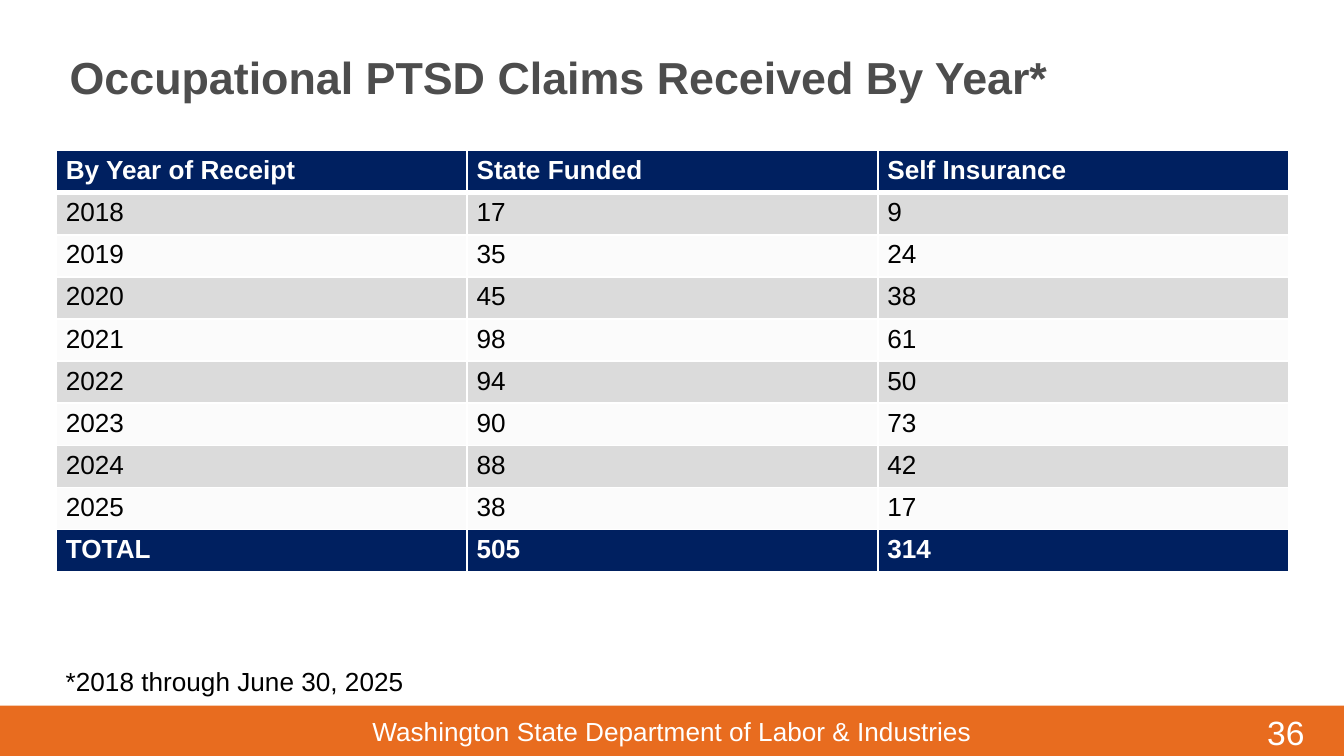
from lxml import etree
from pptx import Presentation
from pptx.dml.color import RGBColor
from pptx.enum.shapes import MSO_SHAPE
from pptx.enum.text import MSO_ANCHOR, PP_ALIGN
from pptx.oxml.ns import qn
from pptx.util import Inches, Pt

RECTANGLE = MSO_SHAPE.RECTANGLE
TOP, MIDDLE = MSO_ANCHOR.TOP, MSO_ANCHOR.MIDDLE
LEFT, CENTER = PP_ALIGN.LEFT, PP_ALIGN.CENTER

WHITE = RGBColor(0xFF, 0xFF, 0xFF)
BLACK = RGBColor(0x00, 0x00, 0x00)
GRAY = RGBColor(0x4D, 0x4D, 0x4D)
ORANGE = RGBColor(0xE8, 0x6C, 0x1F)
NAVY = RGBColor(0x00, 0x20, 0x60)
BAND_DARK = RGBColor(0xDB, 0xDB, 0xDB)
BAND_LIGHT = RGBColor(0xFB, 0xFB, 0xFB)

FONT = "Arial"
SLIDE_WIDTH = 10
SLIDE_HEIGHT = SLIDE_WIDTH * 9 / 16
CLAIMS = [
    ("By Year of Receipt", "State Funded", "Self Insurance"),
    ("2018", "17", "9"),
    ("2019", "35", "24"),
    ("2020", "45", "38"),
    ("2021", "98", "61"),
    ("2022", "94", "50"),
    ("2023", "90", "73"),
    ("2024", "88", "42"),
    ("2025", "38", "17"),
    ("TOTAL", "505", "314"),
]


def add_run(p, text, size, color, bold=False):
    """Append one formatted run to a paragraph."""
    r = p.add_run()
    r.text = text
    r.font.name = FONT
    r.font.size = Pt(size)
    r.font.bold = bold
    r.font.color.rgb = color


def add_text(s, box, text, size, color, bold=False, align=LEFT, anchor=TOP, wrap=True):
    """Place a one-line text box."""
    tf = s.shapes.add_textbox(*map(Inches, box)).text_frame
    tf.word_wrap = wrap
    tf.vertical_anchor = anchor
    p = tf.paragraphs[0]
    p.alignment = align
    add_run(p, text, size, color, bold)


def set_borders(cell, bottom):
    """Draw white cell borders, with the bottom width given in points."""
    tc_pr = cell._tc.get_or_add_tcPr()
    widths = {"a:lnL": 1, "a:lnR": 1, "a:lnT": 1, "a:lnB": bottom}
    for index, (tag, width) in enumerate(widths.items()):
        ln = etree.Element(qn(tag), w=str(Pt(width)))
        fill = etree.SubElement(ln, qn("a:solidFill"))
        etree.SubElement(fill, qn("a:srgbClr"), val=str(WHITE))
        tc_pr.insert(index, ln)


def add_claims_table(s, box, rows):
    """Fill the box with a banded table that has a header and a total row."""
    left, top, width, height = box
    last = len(rows) - 1
    frame = s.shapes.add_table(len(rows), len(rows[0]), *map(Inches, box))
    table = frame.table
    table.last_row = True
    for column in table.columns:
        column.width = Inches(width / len(rows[0]))
    for i, values in enumerate(rows):
        table.rows[i].height = Inches(height / len(rows))
        strong = i in (0, last)
        band = BAND_DARK if i % 2 else BAND_LIGHT
        for j, value in enumerate(values):
            cell = table.cell(i, j)
            cell.margin_left = cell.margin_right = Inches(0.07)
            cell.margin_top = cell.margin_bottom = Inches(0.04)
            cell.fill.solid()
            cell.fill.fore_color.rgb = NAVY if strong else band
            set_borders(cell, 3 if i == 0 else 1)
            p = cell.text_frame.paragraphs[0]
            add_run(p, value, 14, WHITE if strong else BLACK, strong)


def add_footer(s, box, agency, number):
    """Place the footer bar with the agency name and the slide number."""
    left, top, width, height = box
    sp = s.shapes.add_shape(RECTANGLE, *map(Inches, box))
    sp.shadow.inherit = False
    sp.fill.solid()
    sp.fill.fore_color.rgb = ORANGE
    sp.line.fill.background()
    add_text(s, (left + width - 0.67, top, 0.58, 0.44), number, 18, WHITE)
    add_text(s, (left, top + 0.02, width, 0.25), agency, 14, WHITE, align=CENTER)


def add_claims_slide(prs):
    """Build the slide of yearly claims."""
    s = prs.slides.add_slide(prs.slide_layouts[6])
    add_footer(s, (0, 5.25, SLIDE_WIDTH, SLIDE_HEIGHT - 5.25),
               "Washington State Department of Labor & Industries", "36")
    add_text(s, (0.42, 0.31, 9.17, 0.52), "Occupational PTSD Claims Received By Year*",
             24, GRAY, bold=True, anchor=MIDDLE)
    add_claims_table(s, (0.42, 1.12, 9.17, 3.12), CLAIMS)
    add_text(s, (0.39, 4.9, 2.72, 0.34), "*2018 through June 30, 2025",
             14, BLACK, wrap=False)


def main():
    """Create and save the presentation."""
    prs = Presentation()
    prs.slide_width, prs.slide_height = Inches(SLIDE_WIDTH), Inches(SLIDE_HEIGHT)
    add_claims_slide(prs)
    prs.save("out.pptx")


if __name__ == "__main__":
    main()
